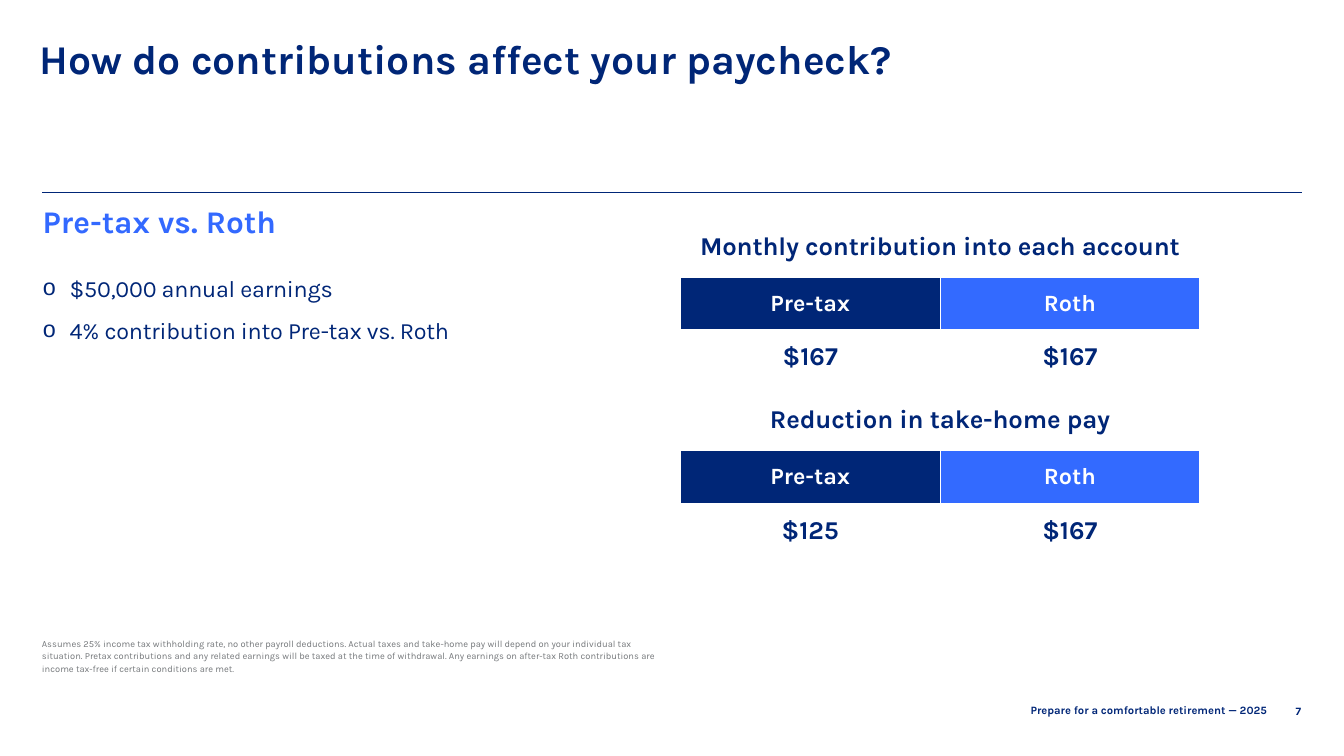
from lxml import etree
from pptx import Presentation
from pptx.dml.color import RGBColor as RGB
from pptx.enum.shapes import MSO_CONNECTOR as Connector
from pptx.enum.text import MSO_ANCHOR as Anchor, MSO_AUTO_SIZE as AutoSize, PP_ALIGN as Align
from pptx.oxml.ns import qn
from pptx.util import Pt

COLORS = {"navy": "002677", "blue": "336AFF", "heading": "3369FF",
          "gray": "75787B", "white": "FFFFFF"}


class SlideBuilder:
    def __init__(self, presentation, font):
        self.slide = presentation.slides.add_slide(presentation.slide_layouts[1])
        self.font = font

    def color(self, name):
        return RGB.from_string(COLORS[name])

    def add_run(self, paragraph, text, size, color="navy", bold=True, spacing=0):
        """Add a styled run; spacing is the letter spacing in points."""
        run = paragraph.add_run()
        run.text = text
        font = run.font
        font.name, font.size, font.bold = self.font, Pt(size), bold
        font.color.rgb = self.color(color)
        if spacing:
            run._r.get_or_add_rPr().set("spc", str(round(spacing * 100)))

    def place(self, shape, box, anchor=Anchor.TOP):
        shape.left, shape.top, shape.width, shape.height = map(Pt, box)
        frame = shape.text_frame
        frame.word_wrap = True
        frame.auto_size = AutoSize.NONE
        frame.vertical_anchor = anchor
        return frame

    def title(self, text, box, size):
        paragraph = self.place(self.slide.shapes.title, box).paragraphs[0]
        paragraph.alignment = Align.LEFT
        paragraph.line_spacing = Pt(30)
        self.add_run(paragraph, text, size)

    def bullets(self, items, box, size, indent=23, gap=12):
        frame = self.place(self.slide.placeholders[1], box)
        for index, item in enumerate(items):
            paragraph = frame.add_paragraph() if index else frame.paragraphs[0]
            props = paragraph._p.get_or_add_pPr()
            props.set("marL", str(Pt(indent)))
            props.set("indent", str(Pt(-indent)))
            bullet_color = etree.SubElement(props, qn("a:buClr"))
            etree.SubElement(bullet_color, qn("a:srgbClr"), val=COLORS["navy"])
            etree.SubElement(props, qn("a:buChar"), char="o")
            paragraph.space_before = Pt(gap if index else 0)
            self.add_run(paragraph, item, size, bold=False, spacing=-0.2)

    def text(self, text, box, size, color="navy", bold=True, align=Align.LEFT,
             anchor=Anchor.TOP, line_spacing=None, bottom=3.6):
        frame = self.place(self.slide.shapes.add_textbox(*map(Pt, box)), box, anchor)
        frame.margin_bottom = Pt(bottom)
        paragraph = frame.paragraphs[0]
        paragraph.alignment = align
        paragraph.line_spacing = line_spacing
        self.add_run(paragraph, text, size, color, bold)

    def rule(self, left, right, y):
        line = self.slide.shapes.add_connector(
            Connector.STRAIGHT, Pt(left), Pt(y), Pt(right), Pt(y))
        line.line.color.rgb = self.color("navy")
        line.line.width = Pt(0.5)
        etree.SubElement(line._element.spPr, qn("a:effectLst"))

    def cell(self, cell, text, size, color="navy", fill=None, anchor=Anchor.MIDDLE,
             margins=(10.8, 10.8), spacing=0):
        """Fill one table cell; margins are top and bottom."""
        cell.margin_left = cell.margin_right = 0
        cell.margin_top, cell.margin_bottom = map(Pt, margins)
        cell.vertical_anchor = anchor
        props = cell._tc.get_or_add_tcPr()
        for side in ("lnL", "lnR", "lnT", "lnB"):
            border = etree.SubElement(props, qn("a:" + side), w=str(Pt(1)))
            solid = etree.SubElement(border, qn("a:solidFill"))
            etree.SubElement(solid, qn("a:srgbClr"), val=COLORS["white"])
        if fill:
            cell.fill.solid()
            cell.fill.fore_color.rgb = self.color(fill)
        else:
            cell.fill.background()
        paragraph = cell.text_frame.paragraphs[0]
        paragraph.alignment = Align.CENTER
        self.add_run(paragraph, text, size, color, spacing=spacing)

    def comparison(self, heading, amounts, left, top):
        """Add a table that sets the pre-tax amount beside the Roth amount."""
        heights = (57.6, 36, 36)
        column_width = 222.6
        table = self.slide.shapes.add_table(
            3, 2, Pt(left), Pt(top), Pt(2 * column_width), Pt(sum(heights))).table
        table.first_row = table.horz_banding = False
        for row, height in zip(table.rows, heights):
            row.height = Pt(height)
        table.cell(0, 0).merge(table.cell(0, 1))
        self.cell(table.cell(0, 0), heading, 22, anchor=Anchor.BOTTOM,
                  margins=(3.6, 13), spacing=-0.1)
        accounts = (("Pre-tax", "navy"), ("Roth", "blue"))
        for column, ((account, fill), amount) in enumerate(zip(accounts, amounts)):
            table.columns[column].width = Pt(column_width)
            self.cell(table.cell(1, column), account, 20, "white", fill)
            self.cell(table.cell(2, column), amount, 22, fill="white")


def main():
    presentation = Presentation()
    presentation.slide_width, presentation.slide_height = Pt(1152), Pt(648)
    page = SlideBuilder(presentation, "Karla")

    page.title("How do contributions affect your paycheck?", (26.6, 37.4, 1089.4, 69.8), 35)
    page.rule(36, 1116, 164.9)
    page.text("Pre-tax vs. Roth", (29.5, 173.5, 533, 42.5), 27, "heading", line_spacing=0.9)
    page.bullets(("$50,000 annual earnings", "4% contribution into Pre-tax vs. Roth"),
                 (29.5, 231.1, 468, 120.2), 20)

    comparisons = (("Monthly contribution into each account", ("$167", "$167")),
                   ("Reduction in take-home pay", ("$125", "$167")))
    for index, (heading, amounts) in enumerate(comparisons):
        page.comparison(heading, amounts, 583.2, 180 + index * 148.5)

    page.text("Assumes 25% income tax withholding rate, no other payroll deductions. "
              "Actual taxes and take-home pay will depend on your individual tax situation. "
              "Pretax contributions and any related earnings will be taxed at the time of "
              "withdrawal. Any earnings on after-tax Roth contributions are income tax-free "
              "if certain conditions are met.",
              (28.8, 542.9, 548.6, 35.3), 8, "gray", bold=False,
              anchor=Anchor.BOTTOM, line_spacing=Pt(11), bottom=0)
    page.text("Prepare for a comfortable retirement — 2025", (704.2, 599.8, 388.8, 17.3), 9.6,
              align=Align.RIGHT, anchor=Anchor.MIDDLE)
    page.text("7", (1093.7, 599.8, 28.8, 13.7), 9.6, align=Align.RIGHT)

    presentation.save("out.pptx")


if __name__ == "__main__":
    main()
